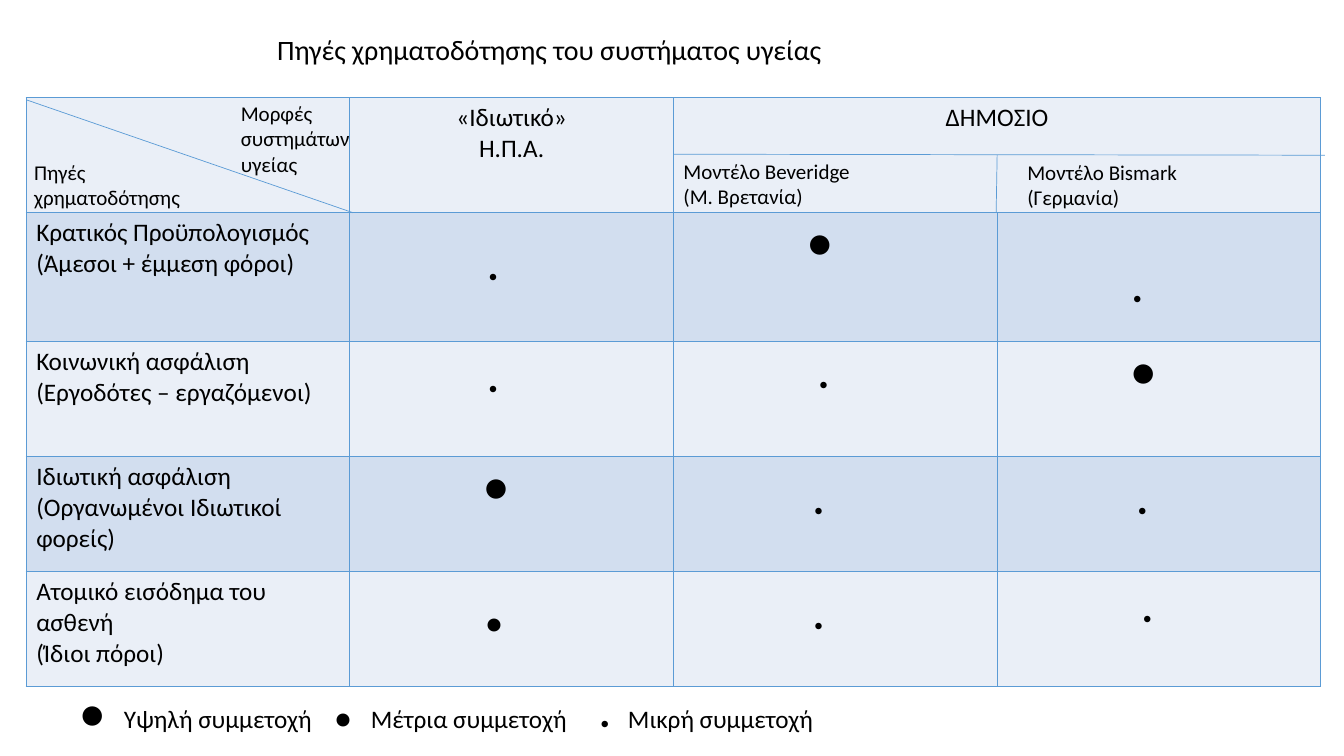
import dataclasses
import typing

import pptx
import pptx.dml.color
import pptx.enum.shapes
import pptx.enum.text
import pptx.oxml
import pptx.oxml.ns
import pptx.util

Inches = pptx.util.Inches
COLORS = {"text": "000000", "line": "5B9BD5", "light": "EAEFF7", "dark": "D2DEEF"}
FONT = "Calibri"
DOT = "●"
HIGH, MEDIUM, LOW = 30, 20, 10  # dot sizes in points
COLUMN_WIDTH = 3.21
ROW_HEIGHTS = [1.14, 1.28, 1.14, 1.14, 1.14]
NAMESPACE = pptx.oxml.ns.nsdecls("a")


@dataclasses.dataclass
class Label:
    lines: list[str]
    left: float
    top: float
    width: float
    height: float
    size: float = 15


@dataclasses.dataclass
class Dot:
    """A participation mark, with its centre measured from the cell corner."""
    size: float
    x: float
    y: float


@dataclasses.dataclass
class Source:
    lines: list[str]
    dots: list[Dot]


class Line(typing.NamedTuple):
    x1: float
    y1: float
    x2: float
    y2: float


LABELS = [
    Label(["Πηγές χρηματοδότησης του συστήματος υγείας"], 2.65, 0.27, 5.83, 0.44, 20),
    Label(["Μορφές συστημάτων υγείας"], 2.29, 0.95, 1.54, 0.86),
    Label(["Πηγές χρηματοδότησης"], 0.24, 1.53, 2, 0.61),
    Label(["Μοντέλο Beveridge", "(Μ. Βρετανία)"], 6.68, 1.52, 3.01, 0.61),
    Label(["Μοντέλο Bismark", "(Γερμανία)"], 10.09, 1.53, 2.71, 0.61),
]
LINES = [
    Line(0.26, 0.99, 3.5, 2.11),
    Line(6.68, 1.53, 13.14, 1.54),
    Line(9.88, 2.11, 9.89, 1.54),
]
HEADERS = {1: ["«Ιδιωτικό»", "Η.Π.Α."], 2: ["ΔΗΜΟΣΙΟ"]}
SOURCES = [
    Source(["Κρατικός Προϋπολογισμός", "(Άμεσοι + έμμεση φόροι)"],
           [Dot(LOW, 1.42, 0.64), Dot(HIGH, 1.45, 0.33), Dot(LOW, 1.39, 0.86)]),
    Source(["Κοινωνική ασφάλιση", "(Εργοδότες – εργαζόμενοι)"],
           [Dot(LOW, 1.42, 0.48), Dot(LOW, 1.49, 0.44), Dot(HIGH, 1.45, 0.33)]),
    Source(["Ιδιωτική ασφάλιση", "(Οργανωμένοι Ιδιωτικοί φορείς)"],
           [Dot(HIGH, 1.45, 0.33), Dot(LOW, 1.44, 0.55), Dot(LOW, 1.44, 0.55)]),
    Source(["Ατομικό εισόδημα του ασθενή", "(Ίδιοι πόροι)"],
           [Dot(MEDIUM, 1.43, 0.54), Dot(LOW, 1.44, 0.55), Dot(LOW, 1.49, 0.48)]),
]
LEGEND = [(HIGH, "Υψηλή συμμετοχή"), (MEDIUM, "Μέτρια συμμετοχή"), (LOW, "Μικρή συμμετοχή")]
LEGEND_TABS = [0.09, 0.53, 2.62, 2.98, 5.26, 5.53]


def rgb(name: str) -> pptx.dml.color.RGBColor:
    return pptx.dml.color.RGBColor.from_string(COLORS[name])


def add_run(paragraph, text: str, size: float) -> None:
    run = paragraph.add_run()
    run.text = text
    for attribute, value in {"name": FONT, "size": pptx.util.Pt(size)}.items():
        setattr(run.font, attribute, value)
    run.font.color.rgb = rgb("text")


def write_lines(frame, lines: list[str], size: float, alignment=None) -> None:
    for index, text in enumerate(lines):
        paragraph = frame.add_paragraph() if index else frame.paragraphs[0]
        paragraph.alignment = alignment
        add_run(paragraph, text, size)


def add_text_frame(slide, left: float, top: float, width: float, height: float):
    frame = slide.shapes.add_textbox(*map(Inches, (left, top, width, height))).text_frame
    frame.word_wrap = True
    return frame


def add_line(slide, line: Line) -> None:
    connector = slide.shapes.add_connector(
        pptx.enum.shapes.MSO_CONNECTOR.STRAIGHT, *map(Inches, line))
    connector.line.color.rgb = rgb("line")
    connector.line.width = pptx.util.Pt(0.5)
    connector.element.spPr.append(pptx.oxml.parse_xml(f"<a:effectLst {NAMESPACE}/>"))


def style_cell(cell, fill: str) -> None:
    properties = cell._tc.get_or_add_tcPr()
    for side in ("lnL", "lnR", "lnT", "lnB"):
        properties.append(pptx.oxml.parse_xml(
            f'<a:{side} {NAMESPACE} w="12700"><a:solidFill>'
            f'<a:srgbClr val="{COLORS["line"]}"/></a:solidFill></a:{side}>'))
    cell.fill.solid()
    cell.fill.fore_color.rgb = rgb(fill)


def place_dot(cell, dot: Dot) -> None:
    """Set the cell margins so that the glyph is centred on the dot's point."""
    em = dot.size / 72
    margins = {"margin_left": dot.x - 0.3 * em, "margin_top": dot.y - 0.67 * em}
    for attribute, value in margins.items():
        setattr(cell, attribute, Inches(value))
    write_lines(cell.text_frame, [DOT], dot.size)


def add_financing_table(slide) -> None:
    table = slide.shapes.add_table(
        5, 4, Inches(0.26), Inches(0.97),
        Inches(4 * COLUMN_WIDTH), Inches(sum(ROW_HEIGHTS))).table
    for attribute in ("first_row", "horz_banding"):
        setattr(table, attribute, False)
    for column in table.columns:
        column.width = Inches(COLUMN_WIDTH)
    for index, height in enumerate(ROW_HEIGHTS):
        table.rows[index].height = Inches(height)
        for cell in table.rows[index].cells:
            style_cell(cell, "dark" if index % 2 else "light")
    table.cell(0, 2).merge(table.cell(0, 3))
    for column_index, lines in HEADERS.items():
        write_lines(table.cell(0, column_index).text_frame, lines, 18,
                    pptx.enum.text.PP_ALIGN.CENTER)
    for row_index, source in enumerate(SOURCES, 1):
        write_lines(table.cell(row_index, 0).text_frame, source.lines, 18)
        for column_index, dot in enumerate(source.dots, 1):
            place_dot(table.cell(row_index, column_index), dot)


def add_legend(slide) -> None:
    paragraph = add_text_frame(slide, 0.6, 6.76, 10.25, 0.61).paragraphs[0]
    stops = "".join(f'<a:tab pos="{Inches(stop)}" algn="l"/>' for stop in LEGEND_TABS)
    paragraph._p.get_or_add_pPr().append(
        pptx.oxml.parse_xml(f"<a:tabLst {NAMESPACE}>{stops}</a:tabLst>"))
    for size, meaning in LEGEND:
        add_run(paragraph, "\t" + DOT, size)
        add_run(paragraph, "\t" + meaning, 18)


def main() -> None:
    presentation = pptx.Presentation()
    presentation.slide_width = Inches(13.33)
    presentation.slide_height = Inches(7.5)
    slide = presentation.slides.add_slide(presentation.slide_layouts[6])
    add_financing_table(slide)
    for line in LINES:
        add_line(slide, line)
    for label in LABELS:
        frame = add_text_frame(slide, label.left, label.top, label.width, label.height)
        write_lines(frame, label.lines, label.size)
    add_legend(slide)
    presentation.save("out.pptx")


if __name__ == "__main__":
    main()
